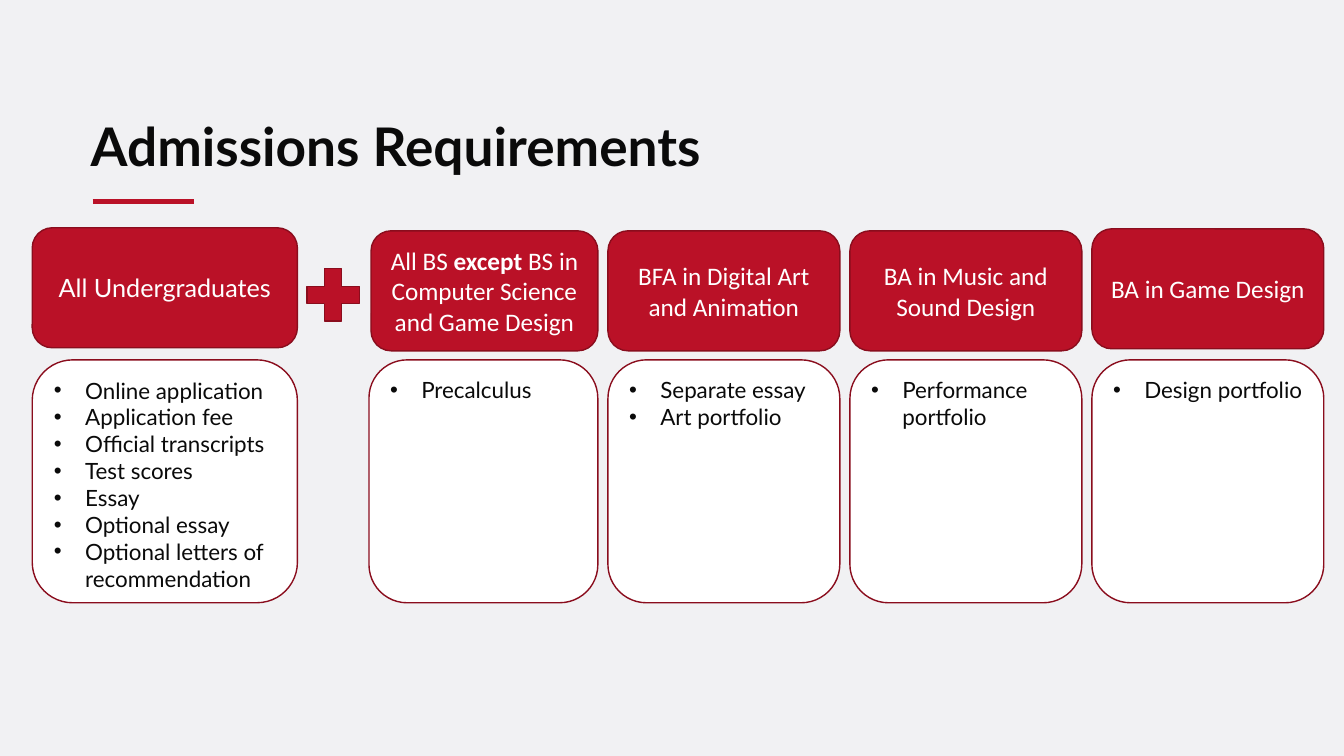
from lxml import etree
from pptx import Presentation
from pptx.dml.color import RGBColor
from pptx.enum import shapes, text
from pptx.oxml import ns
from pptx.util import Inches, Pt

COLORS = {"back": "F1F1F3", "red": "BA1127", "edge": "8A0D1D",
          "white": "FFFFFF", "ink": "0A0A0A"}
SHAPE = shapes.MSO_SHAPE


def add_block(kind, left, top, width, height, fill):
    sp = s.shapes.add_shape(kind, Inches(left), Inches(top), Inches(width), Inches(height))
    sp.shadow.inherit = False
    sp.fill.solid()
    sp.fill.fore_color.rgb = RGBColor.from_string(COLORS[fill])
    sp.line.color.rgb = RGBColor.from_string(COLORS["edge"])
    sp.line.width = Pt(1)
    return sp


def add_run(p, words, size, font, color, bold=False):
    r = p.add_run()
    r.text = words
    r.font.size = Pt(size)
    r.font.name = font
    r.font.bold = bold
    r.font.color.rgb = RGBColor.from_string(COLORS[color])


prs = Presentation()
prs.slide_width, prs.slide_height = Inches(13.33), Inches(7.5)
s = prs.slides.add_slide(prs.slide_layouts[5])
s.background.fill.solid()
s.background.fill.fore_color.rgb = RGBColor.from_string(COLORS["back"])

rule = s.shapes.add_connector(shapes.MSO_CONNECTOR.STRAIGHT,
                              Inches(0.92), Inches(2), Inches(1.92), Inches(2))
rule.line.color.rgb = RGBColor.from_string(COLORS["red"])
rule.line.width = Pt(4)
etree.SubElement(rule.element.spPr, ns.qn("a:effectLst"))

title = s.shapes.title
title.left, title.top = Inches(0.8), Inches(0.54)
title.width, title.height = Inches(10.63), Inches(1.28)
tf = title.text_frame
tf.auto_size = text.MSO_AUTO_SIZE.NONE
tf.vertical_anchor = text.MSO_ANCHOR.BOTTOM
p = tf.paragraphs[0]
p.alignment = text.PP_ALIGN.LEFT
p.line_spacing = 0.9
add_run(p, "Admissions Requirements", 38, "Lato", "ink", True)

add_block(SHAPE.MATH_PLUS, 2.95, 2.57, 0.71, 0.71, "red")

columns = [
    ((0.32, 2.26, 2.63), (0.32, 2.63), "Lato", [("All Undergraduates", False)],
     ["Online application", "Application fee", "Official transcripts", "Test scores",
      "Essay", "Optional essay", "Optional letters of recommendation"]),
    ((3.68, 2.29, 2.25), (3.66, 2.27), "Calibri",
     [("All BS ", False), ("except", True),
      (" BS in Computer Science and Game Design", False)],
     ["Precalculus"]),
    ((6.03, 2.29, 2.3), (6.03, 2.3), "Calibri",
     [("BFA in Digital Art and Animation", False)],
     ["Separate essay", "Art portfolio"]),
    ((8.43, 2.29, 2.3), (8.43, 2.3), "Calibri",
     [("BA in Music and Sound Design", False)],
     ["Performance portfolio"]),
    ((10.83, 2.27, 2.3), (10.83, 2.3), "Calibri",
     [("BA in Game Design", False)],
     ["Design portfolio"]),
]

for (left, top, width), (body_left, body_width), font, heading, items in columns:
    header = add_block(SHAPE.ROUNDED_RECTANGLE, left, top, width, 1.19, "red")
    tf = header.text_frame
    tf.word_wrap = True
    tf.vertical_anchor = text.MSO_ANCHOR.MIDDLE
    p = tf.paragraphs[0]
    p.alignment = text.PP_ALIGN.CENTER
    for words, bold in heading:
        add_run(p, words, 18, font, "white", bold)

    body = add_block(SHAPE.ROUNDED_RECTANGLE, body_left, 3.57, body_width, 2.41, "white")
    tf = body.text_frame
    tf.word_wrap = True
    tf.vertical_anchor = text.MSO_ANCHOR.TOP
    for i, item in enumerate(items):
        p = tf.add_paragraph() if i else tf.paragraphs[0]
        p.alignment = text.PP_ALIGN.LEFT
        pPr = p._p.get_or_add_pPr()
        pPr.set("marL", str(Inches(0.31)))
        pPr.set("indent", str(-Inches(0.31)))
        etree.SubElement(pPr, ns.qn("a:buFont"), typeface="Arial")
        etree.SubElement(pPr, ns.qn("a:buChar"), char="•")
        add_run(p, item, 16, "Lato", "ink")

prs.save("out.pptx")
